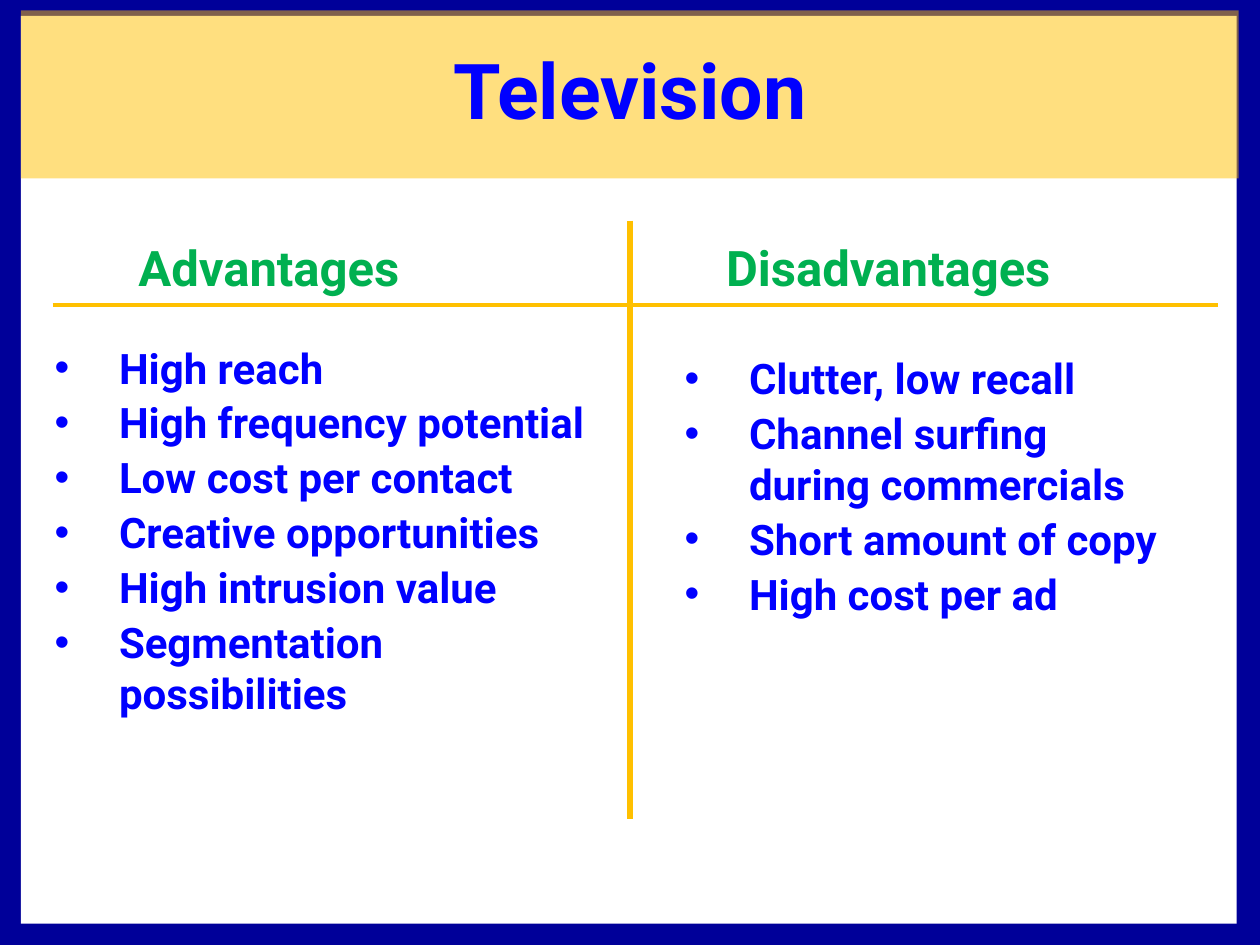
from lxml.etree import SubElement
from pptx import Presentation
from pptx.dml.color import RGBColor
from pptx.enum.shapes import MSO_CONNECTOR, MSO_SHAPE
from pptx.enum.text import MSO_ANCHOR, PP_ALIGN
from pptx.oxml.ns import qn
from pptx.util import Cm, Pt

FONT = "Roboto"
NAVY, WHITE, GOLD, BLUE, GREEN = "000099", "FFFFFF", "FFC000", "0000FF", "00B050"
PAGE_WIDTH, PAGE_HEIGHT = 25.4, 19.05
BULLET_INDENT = 1.3

TITLE = "Television"
TITLE_AREA = (0.76, 0.42, 23.88, 2.75)

# Areas are left, top, width, height in centimetres.
COLUMNS = [
    {
        "heading": "Advantages",
        "heading_area": (2.54, 4.66, 6.32, 1.45),
        "points": ["High reach", "High frequency potential", "Low cost per contact",
                   "Creative opportunities", "High intrusion value",
                   "Segmentation possibilities"],
        "points_area": (0.85, 6.77, 11.22, 8.89),
    },
    {
        "heading": "Disadvantages",
        "heading_area": (14.39, 4.66, 7.8, 1.45),
        "points": ["Clutter, low recall", "Channel surfing during commercials",
                   "Short amount of copy", "High cost per ad"],
        "points_area": (13.55, 6.99, 10.37, 6.56),
    },
]

# Area, fill, opacity in percent
PANELS = [
    ((0, 0, PAGE_WIDTH, PAGE_HEIGHT), NAVY, 100),
    ((0.42, 0.32, 24.51, 18.3), WHITE, 100),
    ((0.42, 0.21, 24.55, 3.39), GOLD, 50),
]

# Start x, start y, end x, end y, width in points
RULES = [
    ((12.7, 4.45, 12.7, 16.51), 3),
    ((1.06, 6.14, 24.55, 6.14), 2.25),
]


def color(hex_text):
    return RGBColor.from_string(hex_text)


def lengths(values):
    return [Cm(value) for value in values]


def add_panel(page, area, fill, opacity):
    panel = page.shapes.add_shape(MSO_SHAPE.RECTANGLE, *lengths(area))
    panel.shadow.inherit = False
    panel.line.fill.background()
    panel.fill.solid()
    panel.fill.fore_color.rgb = color(fill)
    if opacity < 100:
        tint = panel.fill._xPr.find(f".//{qn('a:srgbClr')}")
        SubElement(tint, qn("a:alpha"), val=str(opacity * 1000))


def add_rule(page, ends, width):
    rule = page.shapes.add_connector(MSO_CONNECTOR.STRAIGHT, *lengths(ends))
    rule.line.color.rgb = color(GOLD)
    rule.line.width = Pt(width)
    SubElement(rule._element.spPr, qn("a:effectLst"))


def add_text(page, area, lines, size, ink, wrap=True):
    """Add a text box with one bold paragraph per line and return its frame."""
    frame = page.shapes.add_textbox(*lengths(area)).text_frame
    frame.word_wrap = wrap
    for number, line in enumerate(lines):
        para = frame.add_paragraph() if number else frame.paragraphs[0]
        span = para.add_run()
        span.text = line
        span.font.name = FONT
        span.font.size = Pt(size)
        span.font.bold = True
        span.font.color.rgb = color(ink)
    return frame


def add_bullet(para):
    para.space_before = Pt(2.6)
    settings = para._p.get_or_add_pPr()
    settings.set("marL", str(Cm(BULLET_INDENT)))
    settings.set("indent", str(-Cm(BULLET_INDENT)))
    bullet_color = SubElement(settings, qn("a:buClr"))
    SubElement(bullet_color, qn("a:srgbClr"), val=BLUE)
    SubElement(settings, qn("a:buFont"), typeface="Arial")
    SubElement(settings, qn("a:buChar"), char="•")


def main():
    deck = Presentation()
    deck.slide_width, deck.slide_height = lengths((PAGE_WIDTH, PAGE_HEIGHT))
    page = deck.slides.add_slide(deck.slide_layouts[6])

    for panel in PANELS:
        add_panel(page, *panel)

    title = add_text(page, TITLE_AREA, [TITLE], 44, BLUE)
    title.vertical_anchor = MSO_ANCHOR.MIDDLE
    title.paragraphs[0].alignment = PP_ALIGN.CENTER

    for rule in RULES:
        add_rule(page, *rule)

    for column in COLUMNS:
        add_text(page, column["heading_area"], [column["heading"]], 28, GREEN, wrap=False)
        points = add_text(page, column["points_area"], column["points"], 24, BLUE)
        for para in points.paragraphs:
            add_bullet(para)

    deck.save("out.pptx")


if __name__ == "__main__":
    main()
